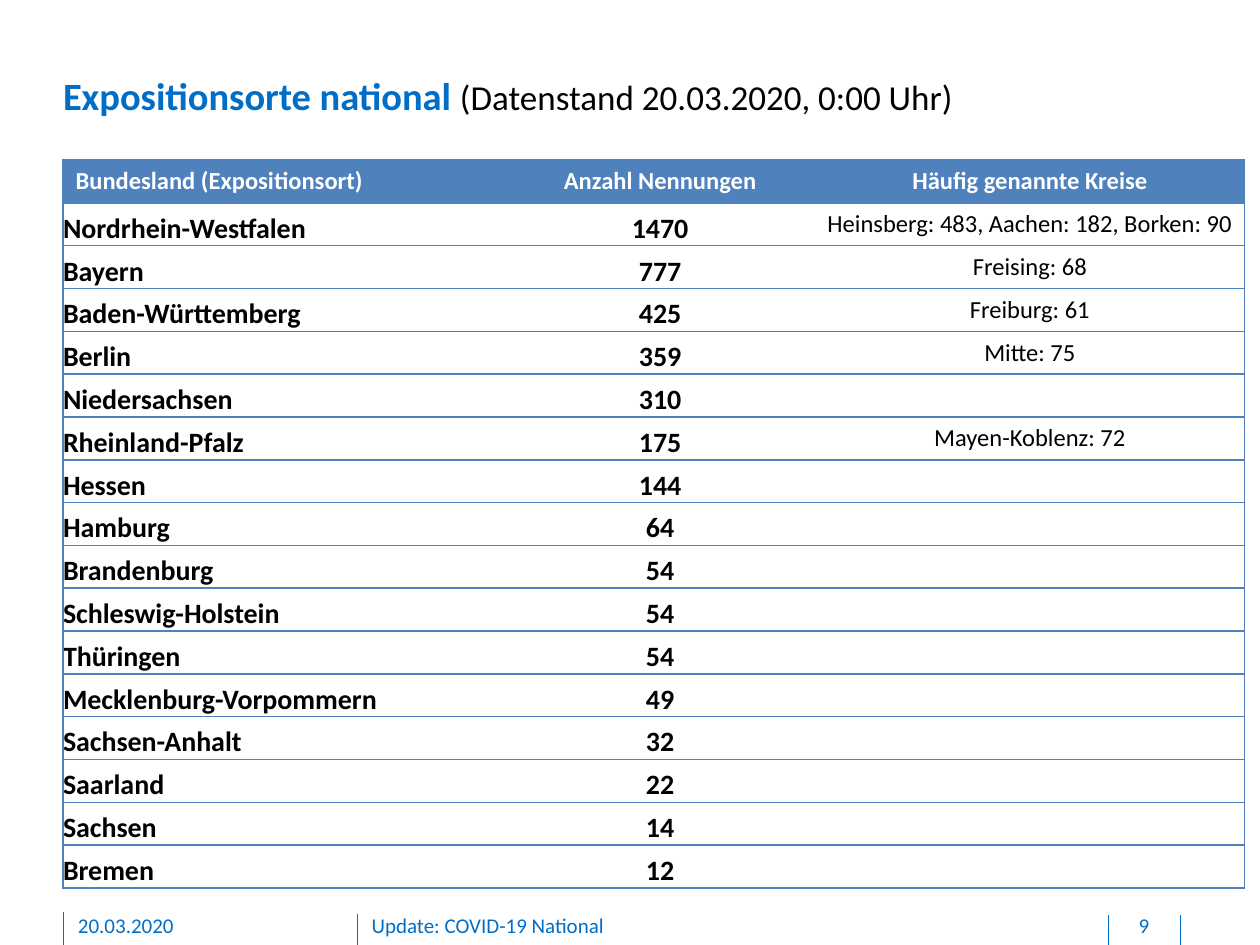
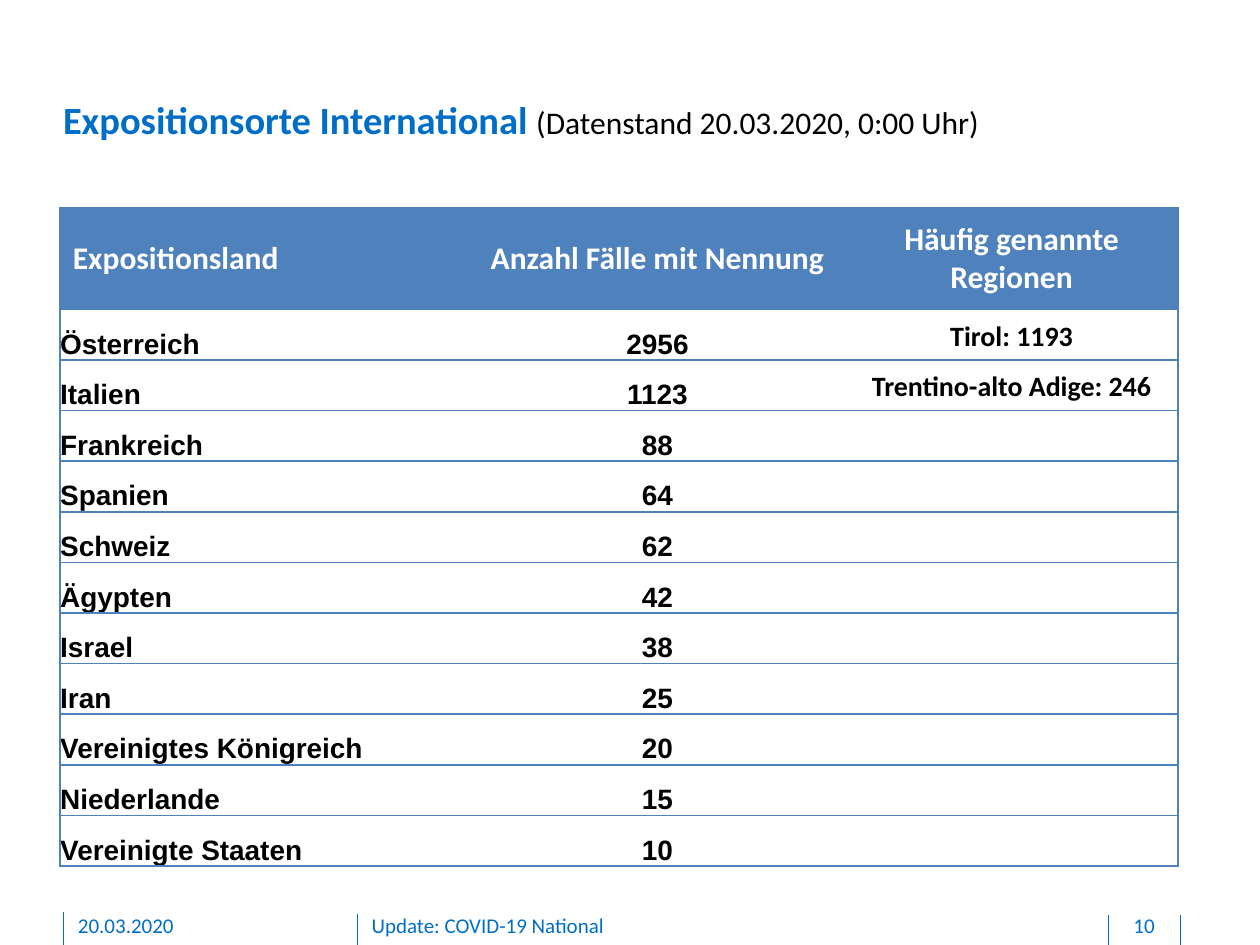
from lxml import etree
from pptx import Presentation
from pptx import util as u
from pptx.dml.color import RGBColor
from pptx.enum import shapes, text
from pptx.oxml import ns

Pt = u.Pt
colors = {"accent": "006EC7", "table": "4F81BD", "white": "FFFFFF", "black": "000000"}
anchors = text.MSO_ANCHOR
NO_GRID_STYLE = "{2D5ABB26-0587-4C30-8999-92F81FD0307C}"


def write(frame, words, size=12, color="accent", bold=False, face="Calibri",
          align="LEFT", anchor=anchors.TOP, margins=(0, 0, 0, 0)):
    frame.word_wrap = True
    frame.vertical_anchor = anchor
    frame.margin_left, frame.margin_top, frame.margin_right, frame.margin_bottom = map(Pt, margins)
    para = frame.paragraphs[0]
    para.alignment = getattr(text.PP_ALIGN, align)
    if words:
        span = para.add_run()
        span.text = words
        span.font.size = Pt(size)
        span.font.bold = bold
        span.font.name = face
        span.font.color.rgb = RGBColor.from_string(colors[color])


def add_border(cell, side):
    properties = cell._tc.get_or_add_tcPr()
    line = etree.SubElement(properties, ns.qn(f"a:ln{side}"), w=str(Pt(1)))
    fill = etree.SubElement(line, ns.qn("a:solidFill"))
    etree.SubElement(fill, ns.qn("a:srgbClr"), val=colors["table"])


slides = [
    {
        "number": "9", "title": "Expositionsorte national ", "title_top": 41, "date_size": 20,
        "left": 36, "top": 91.5, "columns": [252.7, 177.1, 245.5],
        "header_height": 24.48, "row_height": 24.48, "header_size": 14, "face": "Calibri",
        "region": {"size": 14, "bold": False, "anchor": anchors.MIDDLE},
        "header": ["Bundesland (Expositionsort)", "Anzahl Nennungen", "Häufig genannte Kreise"],
        "rows": [
            ("Nordrhein-Westfalen", 1470, "Heinsberg: 483, Aachen: 182, Borken: 90"),
            ("Bayern", 777, "Freising: 68"),
            ("Baden-Württemberg", 425, "Freiburg: 61"),
            ("Berlin", 359, "Mitte: 75"),
            ("Niedersachsen", 310, ""),
            ("Rheinland-Pfalz", 175, "Mayen-Koblenz: 72"),
            ("Hessen", 144, ""),
            ("Hamburg", 64, ""),
            ("Brandenburg", 54, ""),
            ("Schleswig-Holstein", 54, ""),
            ("Thüringen", 54, ""),
            ("Mecklenburg-Vorpommern", 49, ""),
            ("Sachsen-Anhalt", 32, ""),
            ("Saarland", 22, ""),
            ("Sachsen", 14, ""),
            ("Bremen", 12, ""),
        ],
    },
    {
        "number": "10", "title": "Expositionsorte International ", "title_top": 54.7, "date_size": 18,
        "left": 34.4, "top": 118.8, "columns": [234, 214.6, 190.1],
        "header_height": 58, "row_height": 28.94, "header_size": 18, "face": "Arial",
        "region": {"size": 16, "bold": True, "anchor": anchors.BOTTOM},
        "header": ["Expositionsland", "Anzahl Fälle mit Nennung", "Häufig genannte Regionen"],
        "rows": [
            ("Österreich", 2956, "Tirol: 1193"),
            ("Italien", 1123, "Trentino-alto Adige: 246"),
            ("Frankreich", 88, ""),
            ("Spanien", 64, ""),
            ("Schweiz", 62, ""),
            ("Ägypten", 42, ""),
            ("Israel", 38, ""),
            ("Iran", 25, ""),
            ("Vereinigtes Königreich", 20, ""),
            ("Niederlande", 15, ""),
            ("Vereinigte Staaten", 10, ""),
        ],
    },
]
footer_lines = [(36, 521.3), (204.5, 522), (633.6, 522.7), (674.6, 522.7)]

deck = Presentation()
deck.slide_width, deck.slide_height = Pt(720), Pt(540)

for content in slides:
    page = deck.slides.add_slide(deck.slide_layouts[5])

    for x, top in footer_lines:
        line = page.shapes.add_connector(shapes.MSO_CONNECTOR.STRAIGHT, Pt(x), Pt(top), Pt(x), Pt(540))
        line.line.color.rgb = RGBColor.from_string(colors["accent"])
        line.line.width = Pt(0.5)
        etree.SubElement(line._element.spPr, ns.qn("a:effectLst"))

    title = page.shapes.title
    title.left, title.top, title.width, title.height = Pt(36), Pt(content["title_top"]), Pt(637.2), Pt(26.8)
    write(title.text_frame, content["title"], size=22, bold=True)
    write(title.text_frame, "(Datenstand 20.03.2020, 0:00 Uhr)", size=content["date_size"], color="black")
    title.text_frame.auto_size = text.MSO_AUTO_SIZE.SHAPE_TO_FIT_TEXT

    for words, left, width, align in [
        ("20.03.2020", 44.6, 146.2, "LEFT"),
        ("Update: COVID-19 National", 212.4, 408.2, "LEFT"),
        (content["number"], 634.3, 38.9, "CENTER"),
    ]:
        box = page.shapes.add_textbox(Pt(left), Pt(521.3), Pt(width), Pt(15.1))
        write(box.text_frame, words, align=align, margins=(0, 0, 0, 3.6))

    rows = [content["header"]] + content["rows"]
    heights = [content["header_height"]] + [content["row_height"]] * len(content["rows"])
    frame = page.shapes.add_table(len(rows), 3, Pt(content["left"]), Pt(content["top"]),
                                  Pt(sum(content["columns"])), Pt(sum(heights)))
    frame._element.xpath(".//a:tableStyleId")[0].text = NO_GRID_STYLE
    table = frame.table
    table.horz_banding = False
    for column, width in zip(table.columns, content["columns"]):
        column.width = Pt(width)

    for row_index, (row, height) in enumerate(zip(rows, heights)):
        table.rows[row_index].height = Pt(height)
        is_header = row_index == 0
        for column_index, value in enumerate(row):
            cell = table.cell(row_index, column_index)
            if is_header:
                style = {"size": content["header_size"], "color": "white", "bold": True,
                         "anchor": anchors.MIDDLE, "margins": (7.2, 3.6, 7.2, 3.6)}
            elif column_index == 2:
                margins = (5, 3.6, 5, 3.6) if value else (0, 0, 0, 0)
                style = {"color": "black", "margins": margins, **content["region"]}
            else:
                style = {"size": 16, "color": "black", "bold": True,
                         "face": content["face"], "anchor": anchors.BOTTOM}
            align = "CENTER" if column_index else "LEFT"

            for side in ("LTB", "TB", "RTB")[column_index]:
                add_border(cell, side)
            cell.fill.solid()
            cell.fill.fore_color.rgb = RGBColor.from_string(colors["table" if is_header else "white"])
            anchor, margins = style.pop("anchor"), style.pop("margins", (0, 0, 0, 0))
            write(cell.text_frame, str(value), align=align, **style)
            cell.vertical_anchor = anchor
            cell.margin_left, cell.margin_top, cell.margin_right, cell.margin_bottom = map(Pt, margins)

deck.save("out.pptx")
